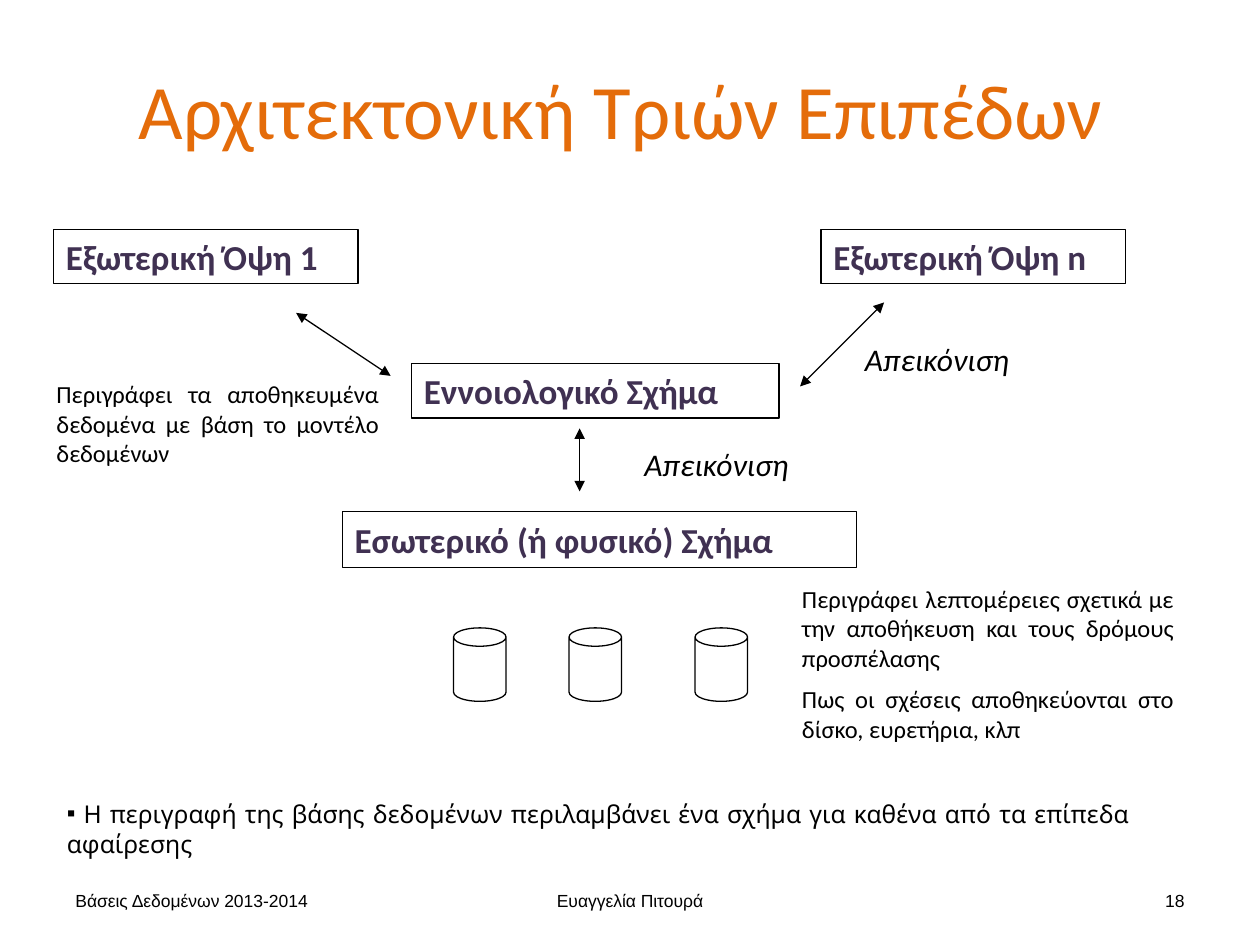
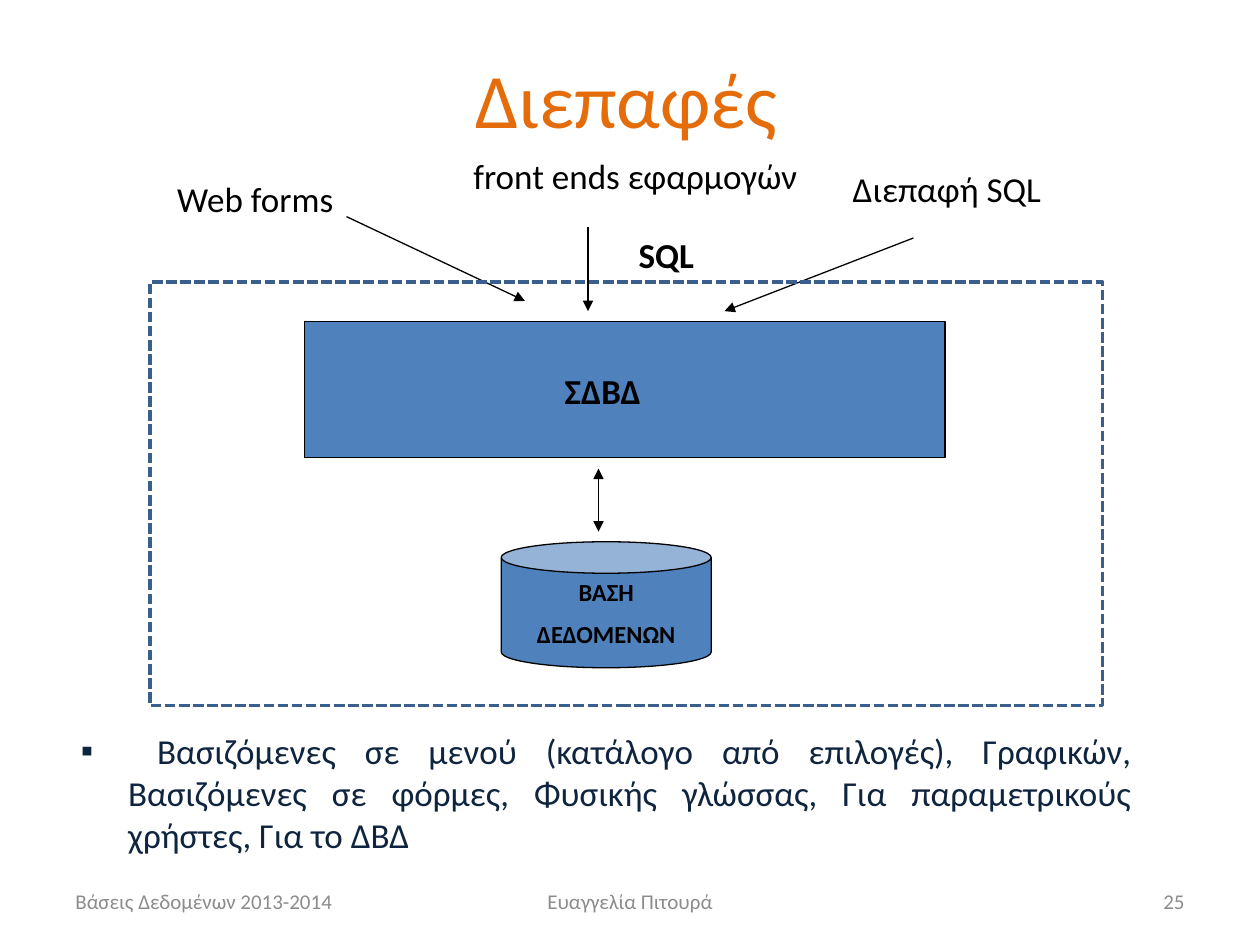
"""Build two database lecture slides: three-level architecture and interfaces."""
from dataclasses import dataclass

from lxml import etree
from pptx import Presentation
from pptx.dml.color import RGBColor
from pptx.enum.dml import MSO_LINE
from pptx.enum.shapes import MSO_CONNECTOR, MSO_SHAPE
from pptx.enum.text import MSO_ANCHOR, MSO_AUTO_SIZE, PP_ALIGN
from pptx.oxml.ns import qn
from pptx.util import Pt

LEFT, CENTER, RIGHT, JUSTIFY = PP_ALIGN.LEFT, PP_ALIGN.CENTER, PP_ALIGN.RIGHT, PP_ALIGN.JUSTIFY
TOP, MIDDLE = MSO_ANCHOR.TOP, MSO_ANCHOR.MIDDLE
RECT, CAN = MSO_SHAPE.RECTANGLE, MSO_SHAPE.CAN
STRAIGHT, NO_FIT, DASHED = MSO_CONNECTOR.STRAIGHT, MSO_AUTO_SIZE.NONE, MSO_LINE.SQUARE_DOT


@dataclass(frozen=True)
class Theme:
    """Colours, fonts and sizes shared by the slides."""
    title: str = "E46C0A"
    ink: str = "000000"
    level: str = "403152"
    list_text: str = "0F243E"
    muted: str = "8C8C8C"
    fill: str = "4F81BD"
    frame: str = "3A5F8C"
    font: str = "Calibri"
    plain_font: str = "Arial"
    list_font: str = "Comic Neue"
    title_size: int = 44
    large: int = 20
    label: int = 18
    medium: int = 16
    note: int = 14
    footer: int = 12
    small: int = 10
    thin: float = 0.75
    thick: float = 2


T = Theme()

FOOTERS = [
    ("Βάσεις Δεδομένων 2013-2014", (36, 500.4, 168, 28.8), LEFT),
    ("Ευαγγελία Πιτουρά", (246, 500.4, 228, 28.8), CENTER),
    ("{number}", (516, 500.4, 168, 28.8), RIGHT),
]

LEVELS = [
    ("Εξωτερική Όψη 1", (30.6, 131, 174, 31.2)),
    ("Εξωτερική Όψη n", (469.2, 131, 174, 31.2)),
    ("Εννοιολογικό Σχήμα", (235.2, 207.6, 210, 31.2)),
    ("Εσωτερικό (ή φυσικό) Σχήμα", (195.6, 292.4, 294, 32)),
]
MAPPINGS = [
    ((505.2, 172.8), (457.2, 220.8)),
    ((169.2, 178.8), (223.2, 214.8)),
    ((331.2, 244.8), (331.2, 280.8)),
]
MAPPING_LABEL = "Απεικόνιση"
MAPPING_LABEL_SPOTS = [(361.2, 250.8, 174, 28.8), (487.2, 190.8, 174, 28.8)]
LEVEL_NOTES = [
    (["Περιγράφει λεπτομέρειες σχετικά με την αποθήκευση και τους δρόμους προσπέλασης",
      "Πως οι σχέσεις αποθηκεύονται στο δίσκο, ευρετήρια, κλπ"], (451.2, 330, 226.8, 100.8)),
    (["Περιγράφει τα αποθηκευμένα δεδομένα με βάση το μοντέλο δεδομένων"],
     (25.2, 213.2, 198.6, 58.4)),
]
STORE_LEFTS = [259.2, 325.2, 397.2]
SCHEMA_POINT = [[
    (" Η", {}),
    (" ", {"size": T.medium, "font": T.plain_font}),
    ("περιγραφή της βάσης δεδομένων περιλαμβάνει ένα σχήμα για καθένα από τα επίπεδα αφαίρεσης", {}),
]]

ACCESS_PATHS = [
    ("Web forms", (94.2, 97.8, 178, 31.6), (198, 123.8), (300, 172)),
    ("front ends εφαρμογών", (263.4, 85, 301, 31.6), (336, 129.6), (336, 177.8)),
    ("Διεπαφή SQL", (480.2, 92, 170, 31.6), (522, 136), (414, 177.8)),
]
DATABASE = ["ΒΑΣΗ", "ΔΕΔΟΜΕΝΩΝ"]
INTERFACE_POINT = [
    " Βασιζόμενες σε μενού (κατάλογο από επιλογές), Γραφικών, Βασιζόμενες σε φόρμες, "
    "Φυσικής γλώσσας, Για παραμετρικούς χρήστες, Για το ΔΒΔ"
]


def write(tf, paragraphs, size=T.large, color=T.ink, font=T.font, bold=False, italic=False,
          align=LEFT, anchor=TOP, bullet=None, indent=0):
    """Fill a text frame with paragraphs, each a string or a list of (text, overrides)."""
    tf.word_wrap = True
    tf.auto_size = NO_FIT
    tf.vertical_anchor = anchor
    for i, content in enumerate(paragraphs):
        p = tf.add_paragraph() if i else tf.paragraphs[0]
        p.alignment = align
        p.space_before = Pt(size / 2 if i else 0)
        for text, own in [(content, {})] if isinstance(content, str) else content:
            r = p.add_run()
            r.text = text
            r.font.size = Pt(own.get("size", size))
            r.font.name = own.get("font", font)
            r.font.bold, r.font.italic = bold, italic
            r.font.color.rgb = RGBColor.from_string(color)
        if bullet:
            pPr = p._p.get_or_add_pPr()
            pPr.set("marL", str(Pt(indent)))
            pPr.set("indent", str(Pt(-indent)))
            etree.SubElement(pPr, qn("a:buFont")).set("typeface", T.plain_font)
            etree.SubElement(pPr, qn("a:buChar")).set("char", bullet)


def add_text(s, paragraphs, box, **fmt):
    """Add a text box at the given place."""
    write(s.shapes.add_textbox(*map(Pt, box)).text_frame, paragraphs, **fmt)


def fill_placeholder(shape, paragraphs, box, **fmt):
    """Move a placeholder and fill it with text."""
    shape.left, shape.top, shape.width, shape.height = map(Pt, box)
    write(shape.text_frame, paragraphs, **fmt)


def add_outline(s, kind, box, fill=None, line=T.ink, width=T.thin, dash=None):
    """Add an outlined preset shape, optionally filled."""
    shape = s.shapes.add_shape(kind, *map(Pt, box))
    shape.shadow.inherit = False
    if fill:
        shape.fill.solid()
        shape.fill.fore_color.rgb = RGBColor.from_string(fill)
    else:
        shape.fill.background()
    shape.line.color.rgb = RGBColor.from_string(line)
    shape.line.width = Pt(width)
    if dash:
        shape.line.dash_style = dash
    return shape


def add_arrow(s, start, end, both=False):
    """Add a straight arrow with a head at the end, or at both ends."""
    c = s.shapes.add_connector(STRAIGHT, *map(Pt, start + end))
    c.line.color.rgb = RGBColor.from_string(T.ink)
    c.line.width = Pt(T.thin)
    ln = c.line._get_or_add_ln()
    for tag in ("a:headEnd", "a:tailEnd") if both else ("a:tailEnd",):
        etree.SubElement(ln, qn(tag)).set("type", "triangle")
    etree.SubElement(c._element.spPr, qn("a:effectLst"))


def add_slide(prs, title, title_box, number, **footer_format):
    """Add a slide with its title and footers."""
    s = prs.slides.add_slide(prs.slide_layouts[1])
    fill_placeholder(s.shapes.title, [title], title_box, size=T.title_size, color=T.title,
                     align=CENTER, anchor=MIDDLE)
    for text, box, align in FOOTERS:
        add_text(s, [text.format(number=number)], box, align=align, anchor=MIDDLE, **footer_format)
    return s


def add_architecture_slide(prs):
    """Draw the three schema levels and the mappings between them."""
    s = add_slide(prs, "Αρχιτεκτονική Τριών Επιπέδων", (31, 17.4, 648, 90), 18,
                  size=T.small, font=T.plain_font)
    for left in STORE_LEFTS:
        add_outline(s, CAN, (left, 358.8, 30, 42)).adjustments[0] = 0.35
    for name, box in LEVELS:
        write(add_outline(s, RECT, box).text_frame, [name], color=T.level, bold=True, anchor=MIDDLE)
    for start, end in MAPPINGS:
        add_arrow(s, start, end, both=True)
    for box in MAPPING_LABEL_SPOTS:
        add_text(s, [MAPPING_LABEL], box, size=T.label, italic=True)
    for paragraphs, box in LEVEL_NOTES:
        add_text(s, paragraphs, box, size=T.note, align=JUSTIFY)
    fill_placeholder(s.placeholders[1], SCHEMA_POINT, (31, 451.2, 641, 43),
                     size=T.note, font=T.list_font, bullet="▪")


def add_interfaces_slide(prs):
    """Draw the interfaces that reach the database through the DBMS."""
    s = add_slide(prs, "Διεπαφές", (34, 10.8, 648, 90), 25, size=T.footer, color=T.muted)
    add_outline(s, RECT, (174, 183.6, 366, 78), fill=T.fill)
    add_text(s, ["ΣΔΒΔ"], (263.4, 207.4, 162, 31.2), bold=True, align=CENTER)
    add_outline(s, CAN, (286.4, 309.6, 120, 72), fill=T.fill).adjustments[0] = 0.25
    add_text(s, DATABASE, (286.4, 326.2, 120, 50), size=T.note, bold=True, align=CENTER)
    add_arrow(s, (342, 267.8), (342, 303.8), both=True)
    add_text(s, ["SQL"], (357.8, 129.6, 120, 31.2), bold=True)
    for name, box, start, end in ACCESS_PATHS:
        add_text(s, [name], box)
        add_arrow(s, start, end)
    add_outline(s, RECT, (85.8, 161.2, 544.2, 242), line=T.frame, width=T.thick, dash=DASHED)
    fill_placeholder(s.placeholders[1], INTERFACE_POINT, (39, 413.4, 615, 80),
                     color=T.list_text, align=JUSTIFY, bullet="▪", indent=27)


def main():
    """Build and save the presentation."""
    prs = Presentation()
    prs.slide_width, prs.slide_height = Pt(720), Pt(540)
    add_architecture_slide(prs)
    add_interfaces_slide(prs)
    prs.save("out.pptx")


if __name__ == "__main__":
    main()
